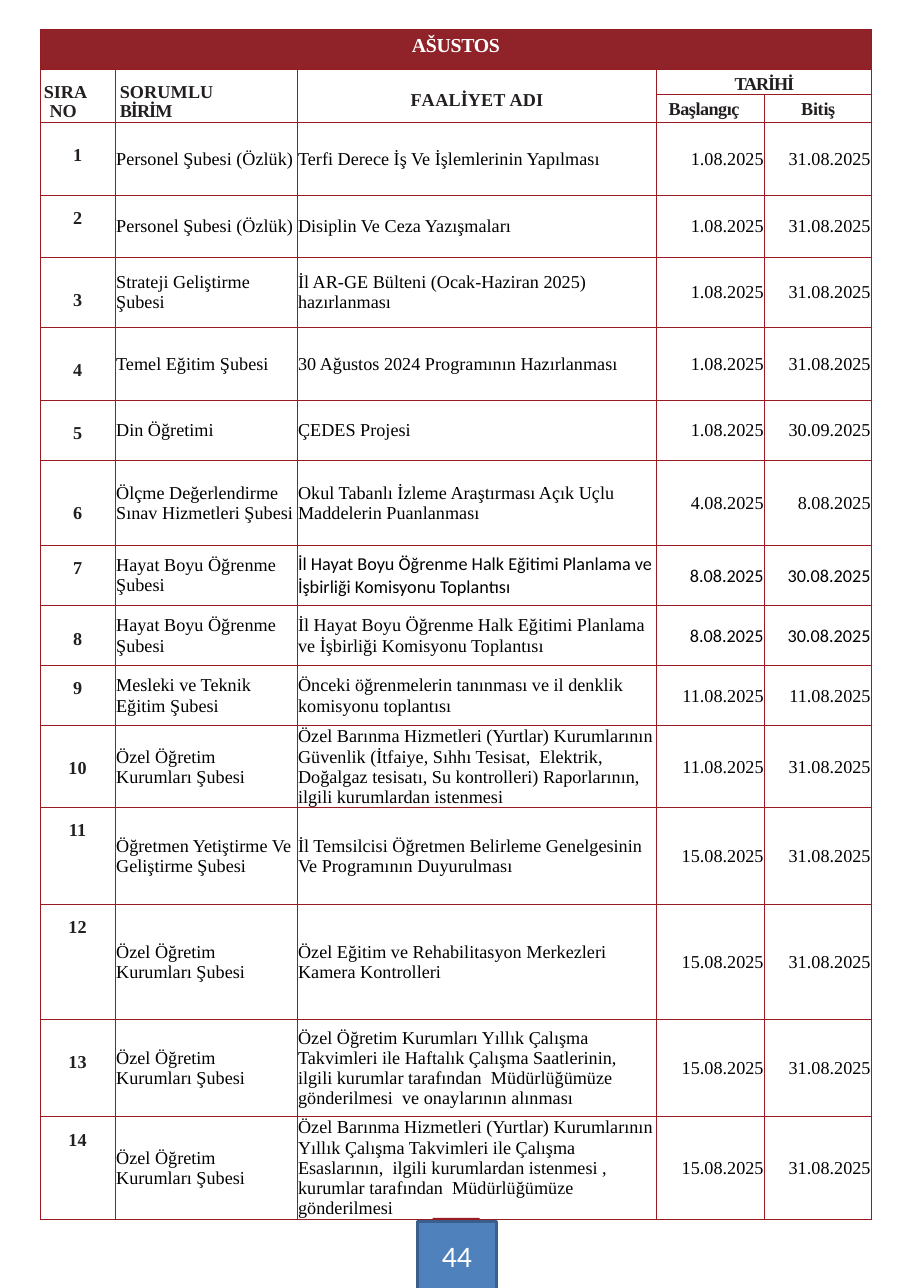
from dataclasses import dataclass
from itertools import product

from lxml import etree
from pptx import Presentation
from pptx import util as u
from pptx.dml.color import RGBColor
from pptx.enum import shapes, text
from pptx.oxml import ns

LEFT, CENTER, RIGHT = text.PP_ALIGN.LEFT, text.PP_ALIGN.CENTER, text.PP_ALIGN.RIGHT


@dataclass(frozen=True)
class Theme:
    serif: str = "Times New Roman"
    sans: str = "Calibri"
    banner: str = "8F2329"
    border: str = "981B22"
    ink: str = "231F20"
    black: str = "000000"
    white: str = "FFFFFF"
    blue: str = "4F81BD"
    navy: str = "3A5F8C"
    banner_size: float = 12
    body_size: float = 11
    page_size: float = 18


# Calendar content: number inset from the row top, row height, texts, dates
OZLUK = "Personel Şubesi (Özlük)"
HAYAT_BOYU = "Hayat Boyu Öğrenme Şubesi"
OZEL = "Özel Öğretim Kurumları Şubesi"
TOPLANTI = ("İl Hayat Boyu Öğrenme Halk Eğitimi Planlama ve "
            "İşbirliği Komisyonu Toplantısı")
ACTIVITIES = [
    (13.8, 44.2, OZLUK, "Terfi Derece İş Ve İşlemlerinin Yapılması", "1.08.2025", "31.08.2025"),
    (8, 37.5, OZLUK, "Disiplin Ve Ceza Yazışmaları", "1.08.2025", "31.08.2025"),
    (20.1, 42.4, "Strateji Geliştirme Şubesi",
     "İl AR-GE Bülteni (Ocak-Haziran 2025) hazırlanması", "1.08.2025", "31.08.2025"),
    (20.2, 44.2, "Temel Eğitim Şubesi",
     "30 Ağustos 2024 Programının Hazırlanması", "1.08.2025", "31.08.2025"),
    (13.8, 36.4, "Din Öğretimi", "ÇEDES Projesi", "1.08.2025", "30.09.2025"),
    (26.2, 51.4, "Ölçme Değerlendirme Sınav Hizmetleri Şubesi",
     "Okul Tabanlı İzleme Araştırması Açık Uçlu Maddelerin Puanlanması",
     "4.08.2025", "8.08.2025"),
    (8, 36.4, HAYAT_BOYU, TOPLANTI, "8.08.2025", "30.08.2025"),
    (14.5, 36.4, HAYAT_BOYU, TOPLANTI, "8.08.2025", "30.08.2025"),
    (8, 36.4, "Mesleki ve Teknik Eğitim Şubesi",
     "Önceki öğrenmelerin tanınması ve il denklik komisyonu toplantısı",
     "11.08.2025", "11.08.2025"),
    (20.1, 49.7, OZEL,
     "Özel Barınma Hizmetleri (Yurtlar) Kurumlarının Güvenlik (İtfaiye, Sıhhı Tesisat,  "
     "Elektrik, Doğalgaz tesisatı, Su kontrolleri) Raporlarının,  ilgili kurumlardan istenmesi",
     "11.08.2025", "31.08.2025"),
    (8, 58.6, "Öğretmen Yetiştirme Ve Geliştirme Şubesi",
     "İl Temsilcisi Öğretmen Belirleme Genelgesinin Ve Programının Duyurulması",
     "15.08.2025", "31.08.2025"),
    (8, 69.7, OZEL, "Özel Eğitim ve Rehabilitasyon Merkezleri  Kamera Kontrolleri",
     "15.08.2025", "31.08.2025"),
    (20.1, 58.6, OZEL,
     "Özel Öğretim Kurumları Yıllık Çalışma Takvimleri ile Haftalık Çalışma Saatlerinin,  "
     "ilgili kurumlar tarafından  Müdürlüğümüze gönderilmesi  ve onaylarının alınması",
     "15.08.2025", "31.08.2025"),
    (8.6, 62.4, OZEL,
     "Özel Barınma Hizmetleri (Yurtlar) Kurumlarının Yıllık Çalışma Takvimleri ile Çalışma "
     "Esaslarının,  ilgili kurumlardan istenmesi , kurumlar tarafından  Müdürlüğümüze "
     "gönderilmesi", "15.08.2025", "31.08.2025"),
]
SANS_CELLS = {(7, 2), (7, 3), (7, 4), (8, 3), (8, 4)}  # (activity number, column)
COLUMN_WIDTHS = [45.4, 110.2, 218, 65.4, 64.8]
HEADER_HEIGHTS = [24.2, 15.1, 17]
BREAK = ("\n", 0)


class CalendarPage:
    def __init__(self, slide, theme):
        self.slide, self.theme = slide, theme

    def add_runs(self, paragraph, runs, size, color, font, bold=False):
        """Add (wording, letter spacing) pairs as runs."""
        for wording, spacing in runs:
            if wording == "\n":
                paragraph.add_line_break()
                continue
            run = paragraph.add_run()
            run.text = wording
            run.font.name, run.font.size, run.font.bold = font, u.Pt(size), bold
            run.font.color.rgb = RGBColor.from_string(color)
            if spacing:
                run._r.get_or_add_rPr().set("spc", str(round(spacing * 100)))

    def box(self, left, top, width, height, fill, line=None):
        shape = self.slide.shapes.add_shape(
            shapes.MSO_SHAPE.RECTANGLE, *map(u.Pt, (left, top, width, height)))
        shape.shadow.inherit = False
        shape.fill.solid()
        shape.fill.fore_color.rgb = RGBColor.from_string(fill)
        if line:
            shape.line.color.rgb = RGBColor.from_string(line)
            shape.line.width = u.Pt(2)
        else:
            shape.line.fill.background()
        return shape

    def page_number(self, number, *place):
        frame = self.box(*place, self.theme.blue, self.theme.navy).text_frame
        frame.vertical_anchor = text.MSO_ANCHOR.MIDDLE
        frame.paragraphs[0].alignment = CENTER
        self.add_runs(frame.paragraphs[0], [(number, 0)], self.theme.page_size,
                      self.theme.white, self.theme.sans)

    def table(self, left, top, widths, heights):
        table = self.slide.shapes.add_table(
            len(heights), len(widths), u.Pt(left), u.Pt(top),
            u.Pt(sum(widths)), u.Pt(sum(heights))).table
        table.first_row = table.horz_banding = False
        for column, width in zip(table.columns, widths):
            column.width = u.Pt(width)
        for row, height in zip(table.rows, heights):
            row.height = u.Pt(height)
        for row, column in product(range(len(heights)), range(len(widths))):
            cell = table.cell(row, column)
            self.borders(cell)
            cell.fill.background()
        return table

    def borders(self, cell):
        properties = cell._tc.get_or_add_tcPr()
        for side in ("a:lnL", "a:lnR", "a:lnT", "a:lnB"):
            line = etree.SubElement(properties, ns.qn(side), w=str(u.Pt(0.5)))
            fill = etree.SubElement(line, ns.qn("a:solidFill"))
            etree.SubElement(fill, ns.qn("a:srgbClr"), val=self.theme.border)

    def cell(self, cell, runs, align, margins, size=None, color=None, font=None,
             bold=False, middle=False, indent=None, line_spacing=None):
        cell.margin_left, cell.margin_top, cell.margin_right, cell.margin_bottom = map(
            u.Pt, margins)
        cell.vertical_anchor = text.MSO_ANCHOR.MIDDLE if middle else text.MSO_ANCHOR.TOP
        paragraph = cell.text_frame.paragraphs[0]
        paragraph.alignment = align
        if line_spacing:
            paragraph.line_spacing = u.Pt(line_spacing)
        if indent:
            properties = paragraph._p.get_or_add_pPr()
            for name, value in zip(("marL", "indent"), indent):
                properties.set(name, str(u.Pt(value)))
        self.add_runs(paragraph, runs, size or self.theme.body_size,
                      color or self.theme.ink, font or self.theme.serif, bold)

    def heading(self, cell, runs, top, align=CENTER, **style):
        self.cell(cell, runs, align, (0, top, 0, 0), bold=True, **style)


def main():
    theme = Theme()
    presentation = Presentation()
    presentation.slide_width, presentation.slide_height = u.Pt(553), u.Pt(779.8)
    slide = presentation.slides.add_slide(presentation.slide_layouts[6])
    page = CalendarPage(slide, theme)

    # Red strip behind the page number
    page.box(262.1, 737.3, 28.4, 42.5, theme.border)

    # Table frame and merged headings
    table = page.table(24.3, 17.7, COLUMN_WIDTHS,
                       HEADER_HEIGHTS + [activity[1] for activity in ACTIVITIES])
    table.cell(0, 0).merge(table.cell(0, 4))
    for column in range(3):
        table.cell(1, column).merge(table.cell(2, column))
    table.cell(1, 3).merge(table.cell(1, 4))

    # Headings
    banner = table.cell(0, 0)
    banner.fill.solid()
    banner.fill.fore_color.rgb = RGBColor.from_string(theme.banner)
    page.heading(banner, [("AŠUSTOS", -0.2)], 3.6, size=theme.banner_size, color=theme.white)
    page.heading(table.cell(1, 0), [("SIRA", 0), BREAK, ("NO", -0.2)], 8, LEFT,
                 indent=(5.8, -3.6), line_spacing=12)
    page.heading(table.cell(1, 1), [("SO", 0), ("R", -0.1), ("UM", 0.1), ("L", -0.3), ("U", 0),
                                    BREAK, ("BİRİM", -0.6)], 8, LEFT,
                 indent=(2.9, 0), line_spacing=12)
    page.heading(table.cell(1, 2), [("F", -0.7), ("A", 0.3), ("A", 0.1), ("LİY", 0), ("E", -0.3),
                                    ("T ", 0), ("A", 0.1), ("DI", 0)], 12.6)
    page.heading(table.cell(1, 3), [("TARİHİ", -0.7)], 2.9)
    page.heading(table.cell(2, 3), [("Başlangıç", -0.3)], 2.9, LEFT, indent=(7.2, 0))
    page.heading(table.cell(2, 4), [("Bitiş", -0.2)], 2.9)

    # Activities
    for number, (inset, _, *entries) in enumerate(ACTIVITIES, 1):
        row = number + len(HEADER_HEIGHTS) - 1
        page.heading(table.cell(row, 0), [(str(number), 0.1 if number > 9 else 0)], inset)
        for column, entry in enumerate(entries, 1):
            page.cell(table.cell(row, column), [(entry, 0)], RIGHT if column > 2 else LEFT,
                      (0.7, 0.7, 0.7, 0), color=theme.black, middle=True,
                      font=theme.sans if (number, column) in SANS_CELLS else theme.serif)

    # Page number
    page.page_number("44", 252.7, 739.4, 48.2, 41.8)

    presentation.save("out.pptx")


if __name__ == "__main__":
    main()
